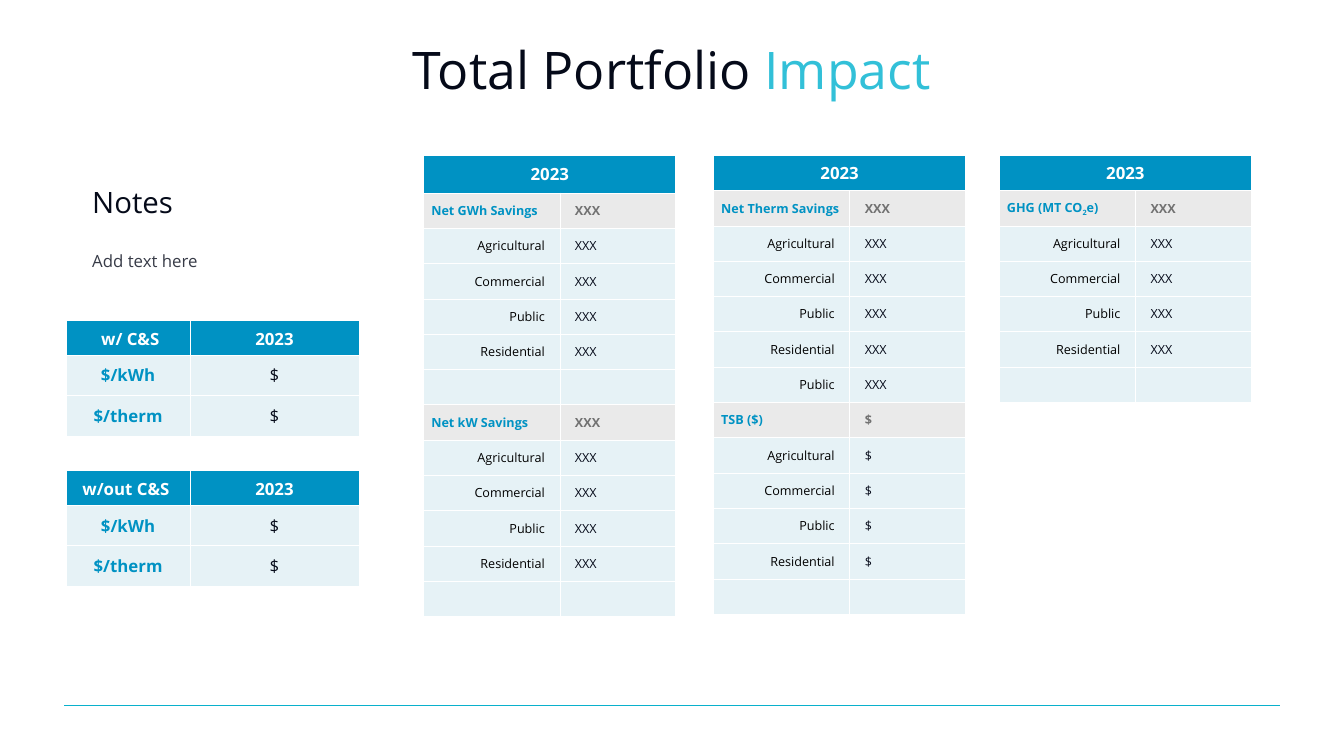
from lxml import etree
from pptx import Presentation, util as u
from pptx.dml.color import RGBColor
from pptx.enum import shapes, text
from pptx.oxml import ns

FONT = "Open Sans"
BLUE, PALE, GREY = "0092C3", "E6F2F6", "EAEAEA"
INK, WHITE, BLACK = "050A19", "FFFFFF", "000000"
LEFT, MID, RIGHT = text.PP_ALIGN.LEFT, text.PP_ALIGN.CENTER, text.PP_ALIGN.RIGHT
SECTORS = ["Agricultural", "Commercial", "Public", "Residential"]


def paint(color, code):
    """Set a colour format from a hex string."""
    color.rgb = RGBColor.from_string(code)


def apply(target, values):
    """Set each attribute named in a dict."""
    for key, value in values.items():
        setattr(target, key, value)


def margins(left, top, right, bottom):
    """Return the inner margins as a dict of format values."""
    sides = zip(("left", "top", "right", "bottom"), (left, top, right, bottom))
    return {f"margin_{side}": u.Cm(size) for side, size in sides}


def add_run(para, words, size, code, bold=False):
    """Append one formatted run to a paragraph."""
    run = para.add_run()
    run.text = words
    apply(run.font, {"name": FONT, "size": u.Pt(size), "bold": bold})
    paint(run.font.color, code)
    return run


def add_text(slide, box, runs, size, inset, form, anchor=text.MSO_ANCHOR.TOP):
    """Add a text box with one paragraph of coloured runs."""
    frame = slide.shapes.add_textbox(*map(u.Cm, box)).text_frame
    apply(frame, {"word_wrap": True, "vertical_anchor": anchor, **margins(*inset)})
    para = frame.paragraphs[0]
    apply(para, form)
    for words, code in runs:
        add_run(para, words, size, code)


def add_rule(slide, left, right, top):
    """Draw the thin line at the foot of the slide."""
    line = slide.shapes.add_connector(
        shapes.MSO_CONNECTOR.STRAIGHT, *map(u.Cm, (left, top, right, top)))
    line.line.width = u.Pt(0.75)
    paint(line.line.color, "09B1CC")
    etree.SubElement(line._element.spPr, ns.qn("a:effectLst"))


def edge_cell(cell):
    """Give a cell white borders on all four sides."""
    props = cell._tc.get_or_add_tcPr()
    for spot, side in enumerate(("lnL", "lnR", "lnT", "lnB")):
        line = etree.Element(ns.qn(f"a:{side}"), w="12700")
        fill = etree.SubElement(line, ns.qn("a:solidFill"))
        etree.SubElement(fill, ns.qn("a:srgbClr"), val=WHITE)
        props.insert(spot, line)


def fill_cell(cell, words, size, code, back, bold, align, inset):
    """Fill a cell; a part between bars in its words is a subscript."""
    apply(cell, {"vertical_anchor": text.MSO_ANCHOR.MIDDLE, **margins(*inset)})
    cell.fill.solid()
    paint(cell.fill.fore_color, back)
    edge_cell(cell)
    para = cell.text_frame.paragraphs[0]
    para.alignment = align
    for spot, part in enumerate(words.split("|") if words else []):
        run = add_run(para, part, size, code, bold)
        if spot % 2:
            run._r.get_or_add_rPr().set("baseline", "-25000")


def add_grid(slide, left, top, cols, rows):
    """Add an unstyled table with the given column and row sizes."""
    frame = slide.shapes.add_table(
        len(rows), len(cols), *map(u.Cm, (left, top, sum(cols), sum(rows))))
    grid = frame.table
    grid.horz_banding = False
    for col, width in zip(grid.columns, cols):
        col.width = u.Cm(width)
    for row, height in zip(grid.rows, rows):
        row.height = u.Cm(height)
    return grid


def add_costs(slide, top, label):
    """Add a table of cost per unit of energy."""
    grid = add_grid(slide, 3.33, top, (6.25, 8.51), (1.63, 2.03, 2.03))
    rows = [(label, "2023"), ("$/kWh", "$"), ("$/therm", "$")]
    for i, row in enumerate(rows):
        for j, words in enumerate(row):
            code = WHITE if i == 0 else (BLUE, INK)[j]
            fill_cell(grid.cell(i, j), words, 24, code, PALE if i else BLUE,
                      i == 0 or j == 0, MID, [0.38] * 4)


def add_savings(slide, left, groups, head=1.78):
    """Add a table of groups, each with a heading row and its sectors."""
    rows = []
    for title, value, names in groups:
        rows += [(title, value, True)] + [(name, value, False) for name in names]
        rows += [("", "", False)] if names[-1] == "Residential" else []
    grid = add_grid(slide, left, 7.82, (6.86, 5.84), [head] + [1.78] * len(rows))
    near, far = 0.38, 0.76
    for j, words in enumerate(("2023", "")):
        fill_cell(grid.cell(0, j), words, 24, WHITE, BLUE, True, MID, (near, 0, near, 0))
    grid.cell(0, 0).merge(grid.cell(0, 1))
    for i, (name, value, top) in enumerate(rows, 1):
        back = GREY if top else PALE
        fill_cell(grid.cell(i, 0), name, 18, BLUE if top else BLACK, back, top,
                  LEFT if top else RIGHT, (near, 0, near if top else far, 0))
        fill_cell(grid.cell(i, 1), value, 18, "727272" if top else INK, back, top,
                  LEFT, (far, 0, near, 0))


def main():
    """Build the slide and save it."""
    deck = Presentation()
    apply(deck, {"slide_width": u.Cm(67.74), "slide_height": u.Cm(38.1)})
    slide = deck.slides.add_slide(deck.slide_layouts[6])
    add_rule(slide, 3.23, 64.52, 35.56)
    add_text(slide, (4.65, 1.85, 58.42, 3.23),
             [("Total Portfolio ", INK), ("Impact", "32C0D8")], 74, [0] * 4,
             {"alignment": MID}, text.MSO_ANCHOR.MIDDLE)
    inset = (0, 0.13, 0.25, 0.13)
    add_text(slide, (4.65, 9.35, 20.5, 2.64), [("Notes", INK)], 42, inset,
             {"line_spacing": 0.9})
    add_text(slide, (4.65, 12.24, 20.5, 20.96), [("Add text here", "373B47")], 24,
             inset, {"line_spacing": 1.28})
    add_costs(slide, 16.13, " w/ C&S")
    add_savings(slide, 21.36, [("Net GWh Savings", "XXX", SECTORS),
                               ("Net kW Savings", "XXX", SECTORS)], 1.9)
    add_savings(slide, 35.97, [("Net Therm Savings", "XXX", SECTORS + ["Public"]),
                               ("TSB ($)", "$", SECTORS)])
    add_savings(slide, 50.37, [("GHG (MT CO|2|e)", "XXX", SECTORS)])
    add_costs(slide, 23.7, "w/out C&S ")
    deck.save("out.pptx")


if __name__ == "__main__":
    main()
